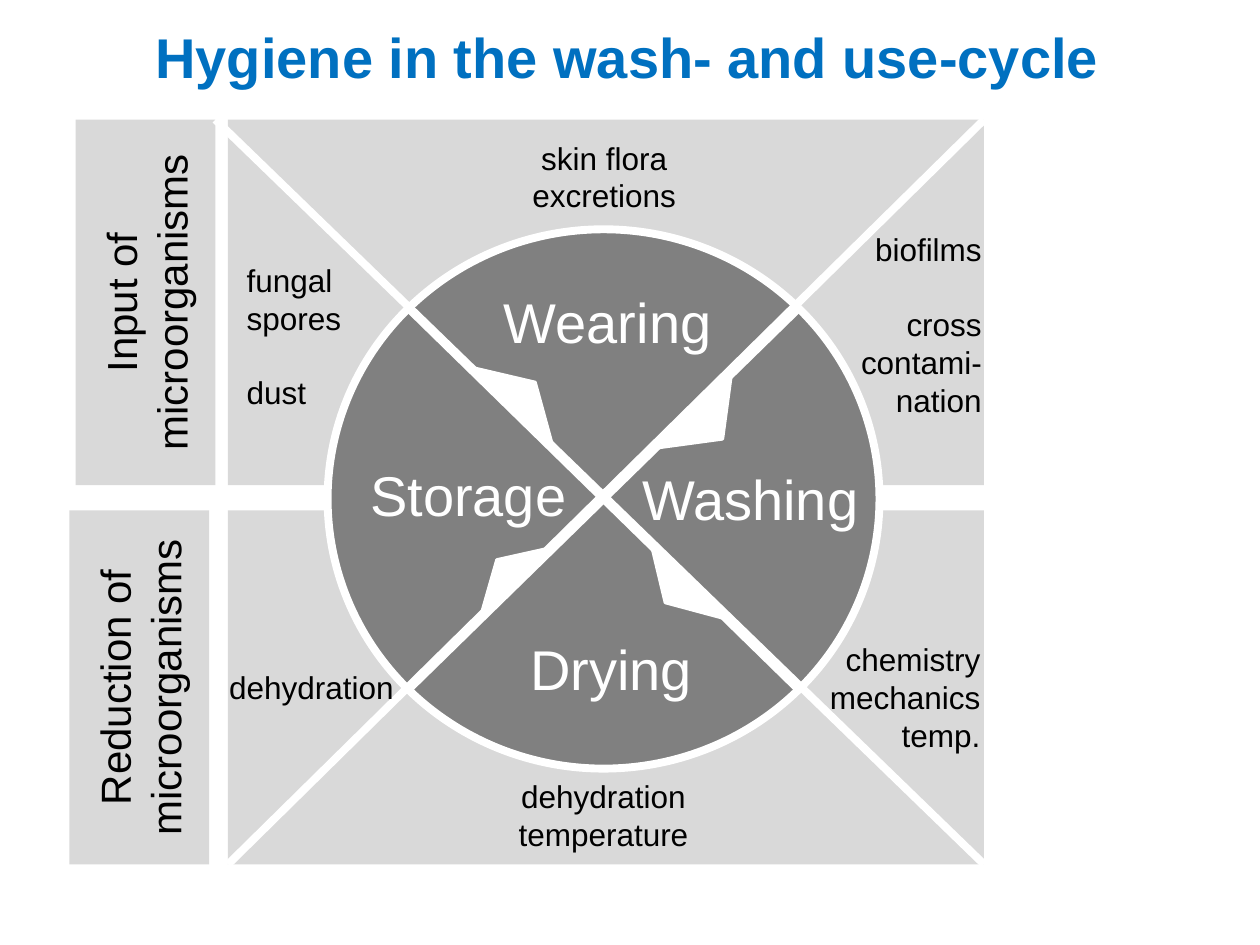
from lxml.etree import SubElement
from pptx import Presentation
from pptx.dml.color import RGBColor
from pptx.enum.shapes import MSO_CONNECTOR, MSO_SHAPE
from pptx.enum.text import MSO_ANCHOR, MSO_AUTO_SIZE, PP_ALIGN
from pptx.oxml.ns import qn
from pptx.util import Emu, Pt

SCALE = 9144  # EMU per px, 100 px to the inch
FONT = "Arial"
COLORS = {
    "title": "0070C0",
    "text": "000000",
    "white": "FFFFFF",
    "panel": "D9D9D9",
    "wheel": "808080",
}
LEFT, CENTER, RIGHT = PP_ALIGN.LEFT, PP_ALIGN.CENTER, PP_ALIGN.RIGHT

# label, label left, top, height
ROWS = [
    ("Input of microorganisms", 60, 95, 290),
    ("Reduction of microorganisms", 55, 405, 281),
]
PHASES = [
    ("Wearing", (390, 223, 186, 64)),
    ("Drying", (411, 499, 150, 64)),
    ("Washing", (500, 364, 193, 64)),
    ("Storage", (284, 361, 177, 64)),
]
# box, rotation
HEADS = [
    ((520, 321, 84, 32), 135),
    ((495, 457, 84, 25), 225.8),
    ((361, 441, 84, 25), 316.7),
    ((374, 300, 84, 25), 43.9),
]
DIAGONALS = [((181, 686), (781, 95)), ((781, 686), (171, 95))]
# groups of lines (a gap stands between groups), box, alignment, wrap
NOTES = [
    ([["skin flora", "excretions"]], (412, 105, 135, 71), CENTER, False),
    ([["biofilms"], ["cross", "contami-nation"]],
     (649, 178, 140, 162), RIGHT, True),
    ([["fungal", "spores"], ["dust"]], (186, 202, 96, 131), LEFT, False),
    ([["dehydration", "temperature"]], (401, 612, 156, 71), CENTER, False),
    ([["chemistry", "mechanics", "temp."]],
     (647, 503, 141, 101), RIGHT, False),
    ([["dehydration"]], (172, 525, 152, 40), LEFT, False),
]


def px(*nums):
    return [Emu(n * SCALE) for n in nums]


def rgb(name):
    return RGBColor.from_string(COLORS[name])


def write(frame, groups, size=18, color="text", align=LEFT, bold=False,
          wrap=True, gap=21, lead=None):
    """Fill a frame with groups of lines, set apart by a gap in points."""
    frame.word_wrap = wrap
    lines = [(line, i == 0 and g > 0)
             for g, group in enumerate(groups) for i, line in enumerate(group)]
    for n, (line, apart) in enumerate(lines):
        para = frame.add_paragraph() if n else frame.paragraphs[0]
        para.alignment = align
        if apart:
            para.space_before = Pt(gap)
        if lead:
            para.line_spacing = Pt(lead)
        run = para.add_run()
        run.text = line
        font = run.font
        font.name, font.size, font.bold = FONT, Pt(size), bold
        font.color.rgb = rgb(color)


def add_text(slide, box, groups, **style):
    frame = slide.shapes.add_textbox(*px(*box)).text_frame
    frame.auto_size = MSO_AUTO_SIZE.SHAPE_TO_FIT_TEXT
    write(frame, groups, **style)


def add_title(slide, text):
    frame = slide.shapes.add_textbox(*px(0, 21, 996, 70)).text_frame
    frame.margin_left = frame.margin_right = 0
    frame.margin_top = frame.margin_bottom = 0
    write(frame, [[text]], size=32, color="title", align=CENTER,
          bold=True, lead=36.3)


def add_shape(slide, kind, box, fill, line=0, turn=0):
    """Add a filled shape; line is the width of a white outline in points."""
    shape = slide.shapes.add_shape(kind, *px(*box))
    shape.shadow.inherit = False
    shape.fill.solid()
    shape.fill.fore_color.rgb = rgb(fill)
    shape.rotation = turn
    if line:
        shape.line.color.rgb = rgb("white")
        shape.line.width = Pt(line)
    else:
        shape.line.fill.background()
    return shape


def add_line(slide, start, end):
    line = slide.shapes.add_connector(MSO_CONNECTOR.STRAIGHT,
                                      *px(*start, *end))
    line.line.color.rgb = rgb("white")
    line.line.width = Pt(4.5)
    SubElement(line._element.spPr, qn("a:effectLst"))


def add_row(slide, label, left, top, high):
    """Add a wide panel and the upright label beside it."""
    add_shape(slide, MSO_SHAPE.RECTANGLE, (181, top, 600, high), "panel")
    side = add_shape(slide, MSO_SHAPE.RECTANGLE, (left, top, 111, high),
                     "panel")
    frame = side.text_frame
    frame.vertical_anchor = MSO_ANCHOR.MIDDLE
    frame._txBody.bodyPr.set("vert", "vert270")
    write(frame, [[label]], size=24, align=CENTER)


def main():
    deck = Presentation()
    deck.slide_width, deck.slide_height = px(1000, 750)
    slide = deck.slides.add_slide(deck.slide_layouts[6])

    for row in ROWS:
        add_row(slide, *row)
    add_shape(slide, MSO_SHAPE.FLOWCHART_SUMMING_JUNCTION,
              (260, 182, 438, 428), "wheel", line=4.5)
    for name, box in PHASES:
        add_text(slide, box, [[name]], size=32, color="white", wrap=False)
    for box, turn in HEADS:
        add_shape(slide, MSO_SHAPE.ISOSCELES_TRIANGLE, box, "white",
                  line=2, turn=turn)
    for start, end in DIAGONALS:
        add_line(slide, start, end)
    for groups, box, align, wrap in NOTES:
        add_text(slide, box, groups, align=align, wrap=wrap)
    add_title(slide, "Hygiene in the wash- and use-cycle")

    deck.save("out.pptx")


if __name__ == "__main__":
    main()
